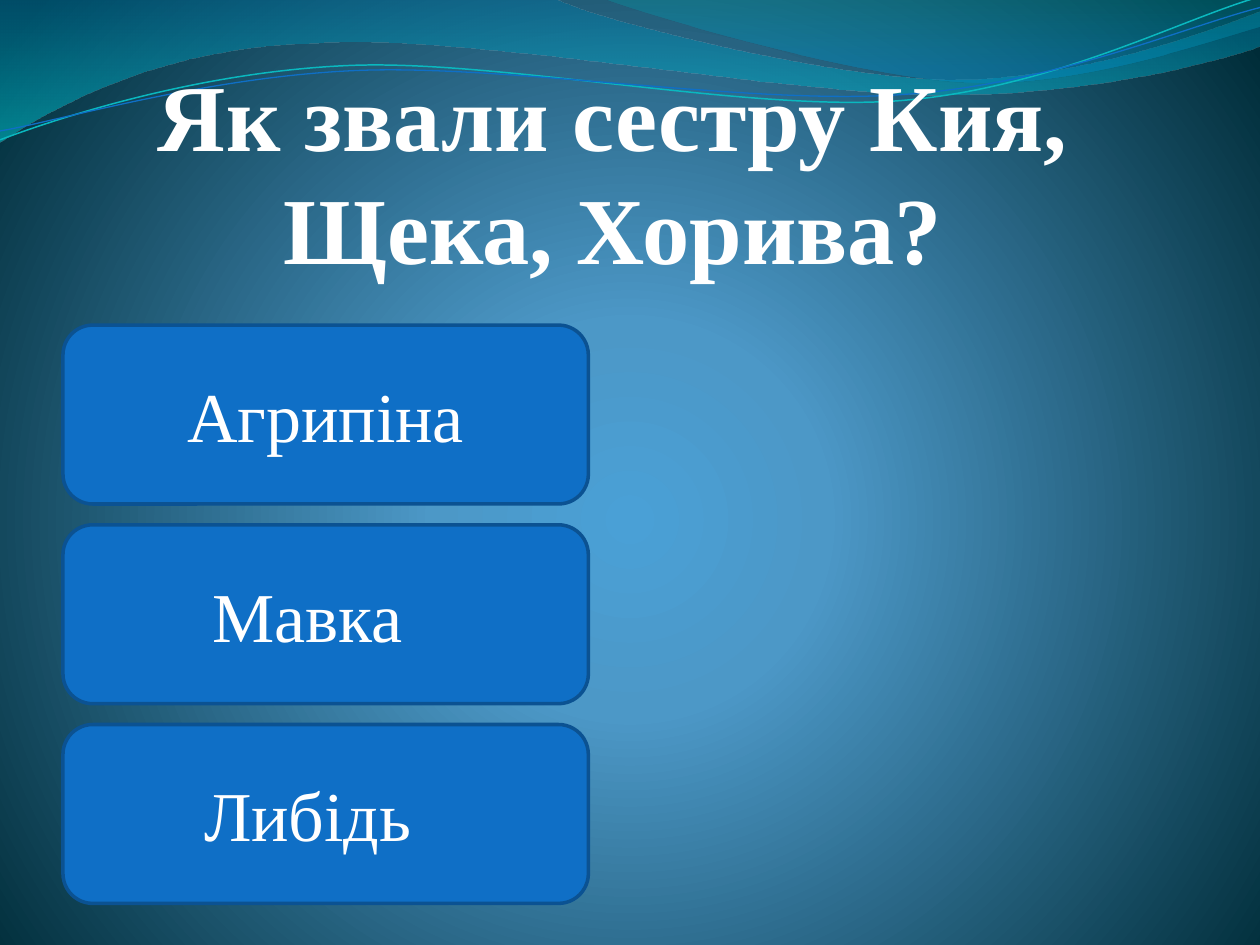
from math import cos, radians, sin
from pptx import Presentation
from pptx.dml.color import RGBColor
from pptx.enum.shapes import MSO_SHAPE
from pptx.enum.text import MSO_ANCHOR, MSO_AUTO_SIZE, PP_ALIGN
from pptx.oxml import parse_xml
from pptx.oxml.ns import nsdecls, qn
from pptx.util import Inches, Pt

QUESTION = "Як звали сестру Кия, Щека, Хорива?"
ANSWERS = [("Агрипіна", 0.1), ("Мавка", 0.38), ("Либідь", 0.38)]
FONT = "Times New Roman"
WHITE, BLUE, EDGE = "FFFFFF", "0F6FC6", "0B5292"
LEFT, TOP, WIDTH, HEIGHT, GAP = 0.5, 2.58, 4.17, 1.42, 0.165
TILT = 2.7

GLOW = [(0, "4AA0D6", 100), (25, "4C98C7", 100), (100, "002C38", 100)]
RADIAL = '<a:path path="circle"><a:fillToRect l="10000" t="110000" r="10000" b="100000"/></a:path>'
DOWNWARD = '<a:lin ang="5400000" scaled="1"/>'

BANDS = [
    ([(0, 0), (4.4, -0.01), (4.76, 0.17, 6.64, 0.63, 7.58, 0.63),
      (8.53, 0.63, 9.58, 0.26, 10, 0.09), (10.01, 0.36),
      (9.83, 0.44, 8.7, 0.76, 7.46, 0.75), (6.22, 0.75, 3.82, 0.28, 2.57, 0.34),
      (1.29, 0.36, 0.46, 0.83, -0.01, 1.13), (0, 0)],
     [(0, "0074A1", 45), (100, "00C6CF", 55)]),
    ([(4.79, -0.01), (5.09, 0.11, 6.82, 0.62, 7.69, 0.65),
      (8.56, 0.69, 9.61, 0.32, 10, 0.21), (10, 0), (4.79, -0.01)],
     [(0, "00A1A9", 30), (80, "008BBF", 45)]),
]
STRANDS = [
    ([(0, 1.11), (0.48, 0.93, 1.58, 0.57, 2.77, 0.52),
      (3.95, 0.47, 5.93, 0.89, 7.13, 0.8), (8.33, 0.71, 9.38, 0.15, 9.98, -0.02)],
     (4.99, 0.58), "0AB8BF", 0.85),
    ([(0, 1.04), (0.47, 0.96, 1.64, 0.61, 2.83, 0.56),
      (4.03, 0.51, 5.97, 0.84, 7.17, 0.75), (8.36, 0.67, 9.41, 0.21, 10, 0.06)],
     (5, 0.59), BLUE, 0.75),
]


def color(hex_code):
    """Turn a hex string into a colour."""
    return RGBColor.from_string(hex_code)


def set_gradient(fill, element, stops, direction):
    """Give a fill a gradient with per-stop opacity."""
    fill.gradient()
    existing = next(element.iter(qn("a:gradFill")))
    stop_xml = "".join(
        f'<a:gs pos="{pos * 1000}"><a:srgbClr val="{code}">'
        f'<a:alpha val="{opacity * 1000}"/></a:srgbClr></a:gs>'
        for pos, code, opacity in stops)
    gradient = parse_xml(f'<a:gradFill {nsdecls("a")} rotWithShape="1">'
                         f"<a:gsLst>{stop_xml}</a:gsLst>{direction}</a:gradFill>")
    existing.getparent().replace(existing, gradient)


def level(segments, center):
    """Turn tilted segments back to level around their centre."""
    cx, cy = center
    c, s = cos(radians(TILT)), sin(radians(TILT))
    leveled = []
    for segment in segments:
        pairs = zip(segment[::2], segment[1::2])
        leveled.append(sum((
            (cx + (x - cx) * c - (y - cy) * s, cy + (x - cx) * s + (y - cy) * c)
            for x, y in pairs), ()))
    return leveled


def add_wave(page, segments, closed):
    """Draw an outline of straight and cubic segments."""
    points = [tuple(map(Inches, segment[-2:])) for segment in segments]
    builder = page.shapes.build_freeform(*points[0])
    builder.add_line_segments(points[1:], close=closed)
    wave = builder.convert_to_shape()
    wave.shadow.inherit = False
    straight = list(wave.element.iter(qn("a:lnTo")))
    for segment, line in zip(segments[1:], straight):
        if len(segment) == 6:
            knots = "".join(
                f'<a:pt x="{Inches(x) - wave.left}" y="{Inches(y) - wave.top}"/>'
                for x, y in zip(segment[::2], segment[1::2]))
            curve = parse_xml(f'<a:cubicBezTo {nsdecls("a")}>{knots}</a:cubicBezTo>')
            line.getparent().replace(line, curve)
    return wave


def write(frame, text, size, bold=False):
    """Write centred white text."""
    frame.word_wrap = True
    para = frame.paragraphs[0]
    para.alignment = PP_ALIGN.CENTER
    span = para.add_run()
    span.text = text
    span.font.name, span.font.size, span.font.bold = FONT, Pt(size), bold
    span.font.color.rgb = color(WHITE)


def add_title(page):
    """Place the question in the title placeholder above the waves."""
    title = page.shapes.title
    title.left, title.top, title.width, title.height = map(Inches, (0.58, 0.42, 8.59, 1.83))
    frame = title.text_frame
    frame.auto_size = MSO_AUTO_SIZE.NONE
    frame.vertical_anchor = MSO_ANCHOR.BOTTOM
    frame.margin_left = frame.margin_top = frame.margin_bottom = 0
    frame.margin_right = Inches(0.02)
    write(frame, QUESTION, 54, bold=True)
    page.shapes.element.append(title.element)


def add_answer(page, index, text, right_margin):
    """Add one answer button."""
    button = page.shapes.add_shape(
        MSO_SHAPE.ROUNDED_RECTANGLE,
        *map(Inches, (LEFT, TOP + index * (HEIGHT + GAP), WIDTH, HEIGHT)))
    button.shadow.inherit = False
    button.fill.solid()
    button.fill.fore_color.rgb = color(BLUE)
    button.line.color.rgb = color(EDGE)
    button.line.width = Pt(2)
    frame = button.text_frame
    frame.vertical_anchor = MSO_ANCHOR.MIDDLE
    frame.margin_right = Inches(right_margin)
    write(frame, text, 40)


def main():
    """Build the quiz slide."""
    deck = Presentation()
    deck.slide_width, deck.slide_height = Inches(10), Inches(7.5)
    page = deck.slides.add_slide(deck.slide_layouts[5])
    set_gradient(page.background.fill, page.element, GLOW, RADIAL)
    for segments, stops in BANDS:
        band = add_wave(page, segments, True)
        set_gradient(band.fill, band.element, stops, DOWNWARD)
        band.line.fill.background()
    for segments, center, hex_code, width in STRANDS:
        strand = add_wave(page, level(segments, center), False)
        strand.rotation = 360 - TILT
        strand.fill.background()
        strand.line.color.rgb = color(hex_code)
        strand.line.width = Pt(width)
    add_title(page)
    for index, (text, right_margin) in enumerate(ANSWERS):
        add_answer(page, index, text, right_margin)
    deck.save("out.pptx")


if __name__ == "__main__":
    main()
